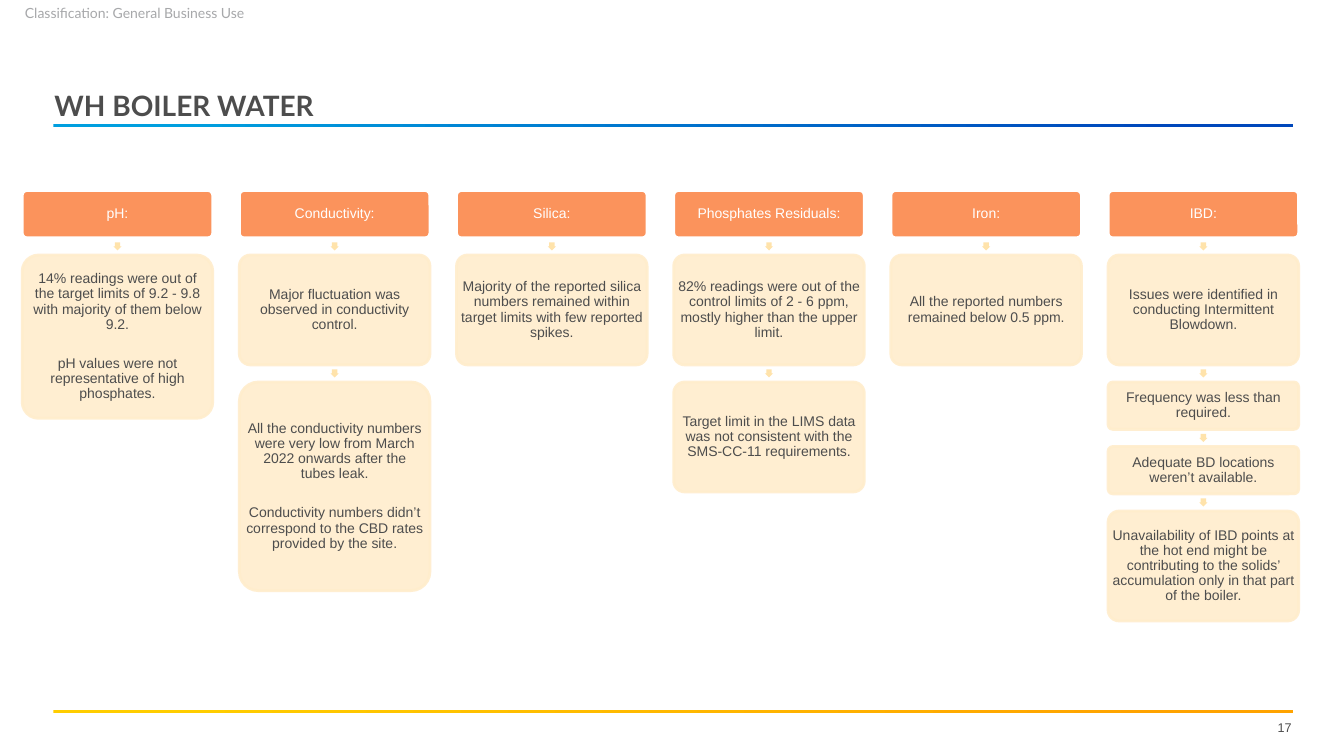
from lxml.etree import SubElement
from pptx import Presentation
from pptx.dml.color import RGBColor
from pptx.enum.shapes import MSO_SHAPE
from pptx.enum.text import MSO_ANCHOR, PP_ALIGN
from pptx.oxml.ns import qn
from pptx.util import Inches, Pt

WIDTH, HEIGHT = 13.33, 7.5
GREY, CREAM, ORANGE, ARROW = "4D4D4D", "FFEDCC", "FB935C", "FFE3AB"
CARD_WIDTH, GAP, ARROW_SIZE = 1.89, 0.17, 0.08
SHORT, MEDIUM, TALL, TALLEST = 0.47, 1.09, 1.62, 2.07

TOPICS = [
    ("pH:", [
        (TALL, ["14% readings were out of the target limits of 9.2 - 9.8 with majority of them below 9.2.",
                "pH values were not representative of high phosphates."]),
    ]),
    ("Conductivity:", [
        (MEDIUM, ["Major fluctuation was observed in conductivity control."]),
        (TALLEST, ["All the conductivity numbers were very low from March 2022 onwards after the tubes leak.",
                   "Conductivity numbers didn’t correspond to the CBD rates provided by the site."]),
    ]),
    ("Silica:", [
        (MEDIUM, ["Majority of the reported silica numbers remained within target limits with few reported spikes."]),
    ]),
    ("Phosphates Residuals:", [
        (MEDIUM, ["82% readings were out of the control limits of 2 - 6 ppm, mostly higher than the upper limit."]),
        (MEDIUM, ["Target limit in the LIMS data was not consistent with the SMS-CC-11 requirements."]),
    ]),
    ("Iron:", [
        (MEDIUM, ["All the reported numbers remained below 0.5 ppm."]),
    ]),
    ("IBD:", [
        (MEDIUM, ["Issues were identified in conducting Intermittent Blowdown."]),
        (SHORT, ["Frequency was less than required."]),
        (SHORT, ["Adequate BD locations weren’t available."]),
        (MEDIUM, ["Unavailability of IBD points at the hot end might be contributing to the solids’ "
                  "accumulation only in that part of the boiler."]),
    ]),
]


def color(value):
    return RGBColor.from_string(value)


def write(shape, texts, size, font, value, align, anchor=MSO_ANCHOR.MIDDLE, inset=0, bold=False, spacing=1.0):
    frame = shape.text_frame
    frame.word_wrap = True
    frame.vertical_anchor = anchor
    frame.margin_left = frame.margin_right = frame.margin_top = frame.margin_bottom = Inches(inset)
    for index, text in enumerate(texts):
        paragraph = frame.add_paragraph() if index else frame.paragraphs[0]
        paragraph.alignment = align
        paragraph.line_spacing = spacing
        if index:
            paragraph.space_before = Pt(17)
        run = paragraph.add_run()
        run.text = text
        run.font.size = Pt(size)
        run.font.name = font
        run.font.bold = bold
        run.font.color.rgb = color(value)


def add_label(slide, box, text, size, font, value, align, **options):
    shape = slide.shapes.add_textbox(*map(Inches, box))
    write(shape, [text], size, font, value, align, **options)


def add_block(slide, preset, box, fill):
    shape = slide.shapes.add_shape(preset, *map(Inches, box))
    shape.shadow.inherit = False
    shape.fill.solid()
    shape.fill.fore_color.rgb = color(fill)
    shape.line.fill.background()
    return shape


def add_rule(slide, box, start, end):
    rule = add_block(slide, MSO_SHAPE.RECTANGLE, box, start)
    rule.fill.gradient()
    rule.fill.gradient_angle = 0
    for stop, position, value in zip(rule.fill.gradient_stops, (0.1, 0.9), (start, end)):
        stop.position = position
        stop.color.rgb = color(value)


def add_card(slide, box, texts, fill, line, text_color, alpha=None):
    card = add_block(slide, MSO_SHAPE.ROUNDED_RECTANGLE, box, fill)
    card.adjustments[0] = 0.1
    card.line.color.rgb = color(line)
    card.line.width = Pt(2)
    if alpha:
        for tint in card._element.spPr.iter(qn("a:srgbClr")):
            SubElement(tint, qn("a:alpha"), val=str(alpha * 1000))
    write(card, texts, 10, "Arial", text_color, PP_ALIGN.CENTER, inset=0.01, spacing=0.9)


def add_topic(slide, left, top, heading, findings):
    add_card(slide, (left, top, CARD_WIDTH, SHORT), [heading], ORANGE, "FFFFFF", "FFFFFF")
    bottom = top + SHORT
    for height, texts in findings:
        arrow_box = (left + (CARD_WIDTH - ARROW_SIZE) / 2, bottom + (GAP - ARROW_SIZE) / 2, ARROW_SIZE, ARROW_SIZE)
        arrow = add_block(slide, MSO_SHAPE.RIGHT_ARROW, arrow_box, ARROW)
        arrow.rotation = 90
        arrow.adjustments[0] = 0.67
        arrow.adjustments[1] = 0.5
        add_card(slide, (left, bottom + GAP, CARD_WIDTH, height), texts, CREAM, CREAM, GREY, alpha=90)
        bottom += GAP + height


def add_topics(slide, left, top, width):
    pitch = (width - CARD_WIDTH) / (len(TOPICS) - 1)
    for column, (heading, findings) in enumerate(TOPICS):
        add_topic(slide, left + column * pitch, top, heading, findings)


def add_frame(slide, left, width):
    add_label(slide, (left + width - 0.87, 7.12, 0.86, 0.19), "17", 9, "Arial", GREY, PP_ALIGN.RIGHT)
    add_rule(slide, (left, 7.04, width, 0.03), "FFCD00", "FFA300")
    add_rule(slide, (left, 1.23, width, 0.03), "009FDF", "0047BB")
    add_label(slide, (0, 0, 2.67, 0.26), "Classification: General Business Use", 10, "Lato", "A7A8AA",
              PP_ALIGN.CENTER)
    add_label(slide, (left + 0.01, 0.58, 11.13, 0.63), "WH BOILER WATER", 20, "Lato", GREY, PP_ALIGN.LEFT,
              anchor=MSO_ANCHOR.BOTTOM, bold=True)


def main():
    presentation = Presentation()
    presentation.slide_width = Inches(WIDTH)
    presentation.slide_height = Inches(HEIGHT)
    slide = presentation.slides.add_slide(presentation.slide_layouts[6])
    add_frame(slide, 0.53, 12.29)
    add_topics(slide, 0.22, 1.89, 12.66)
    presentation.save("out.pptx")


if __name__ == "__main__":
    main()
